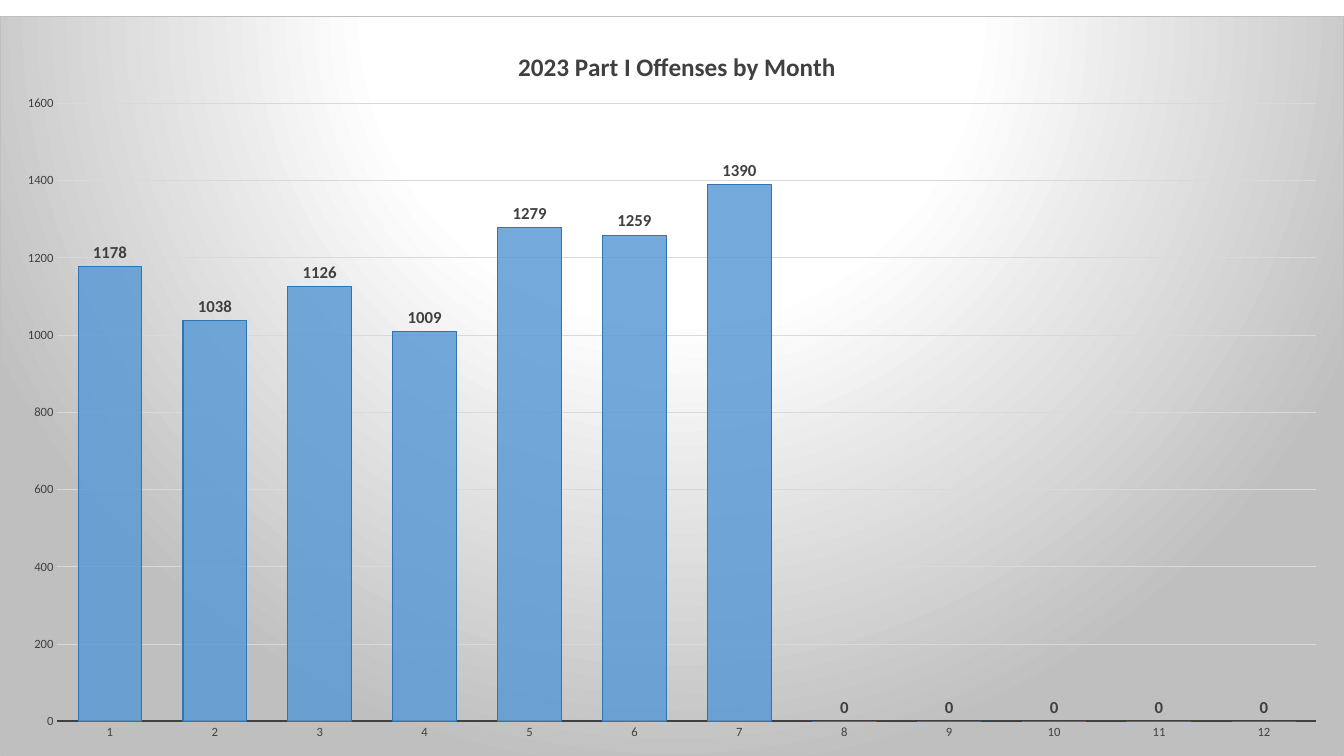
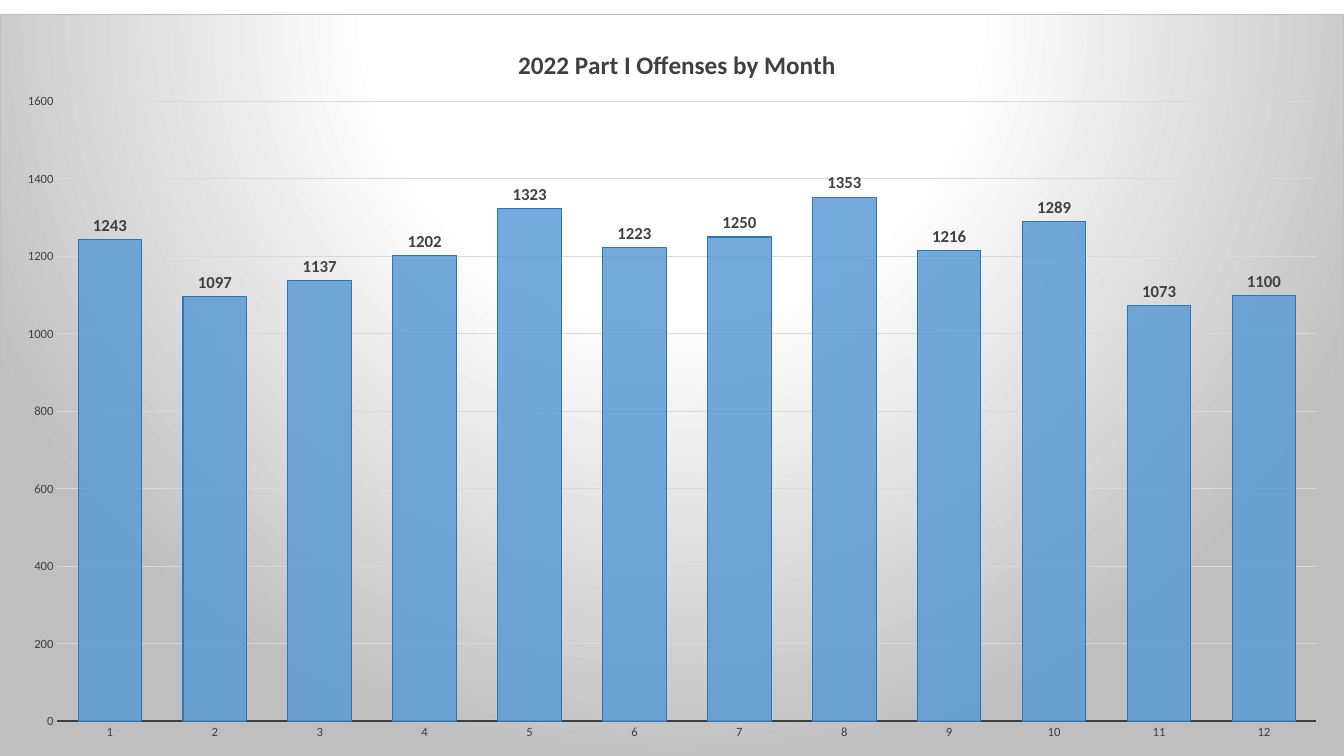
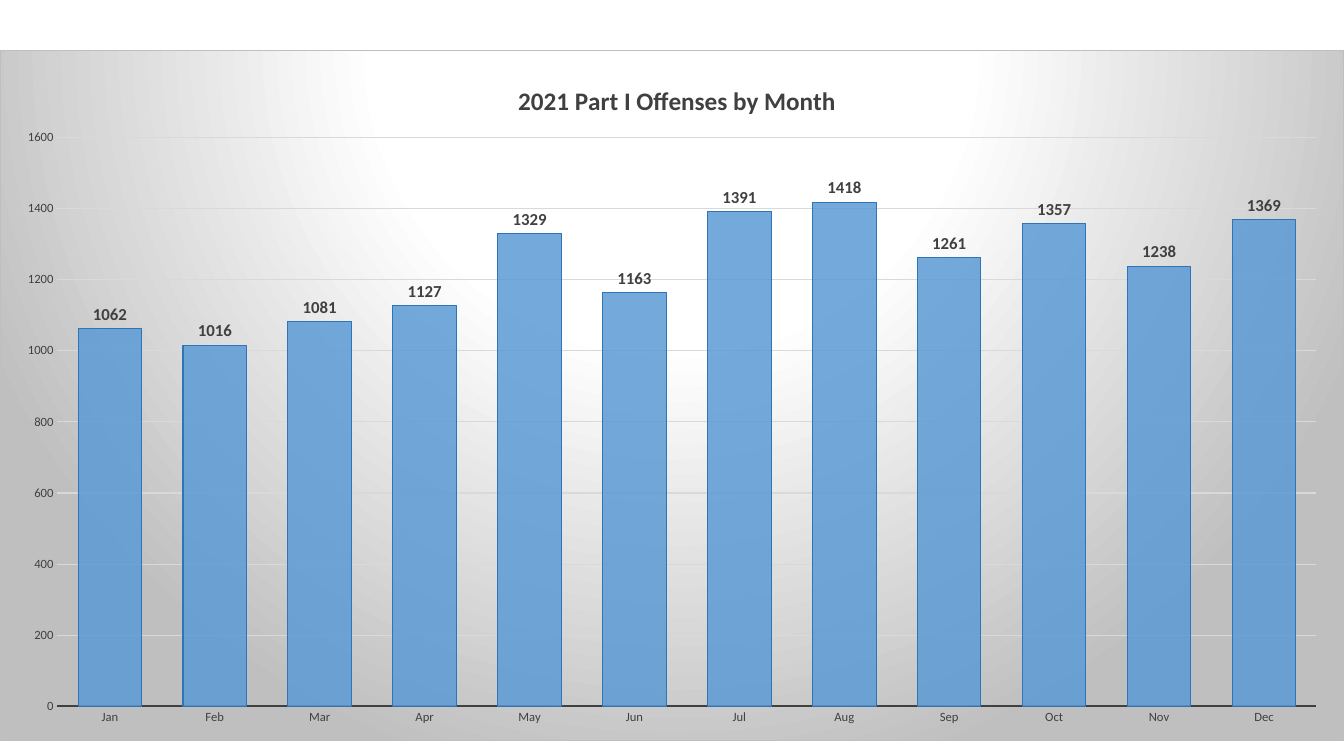
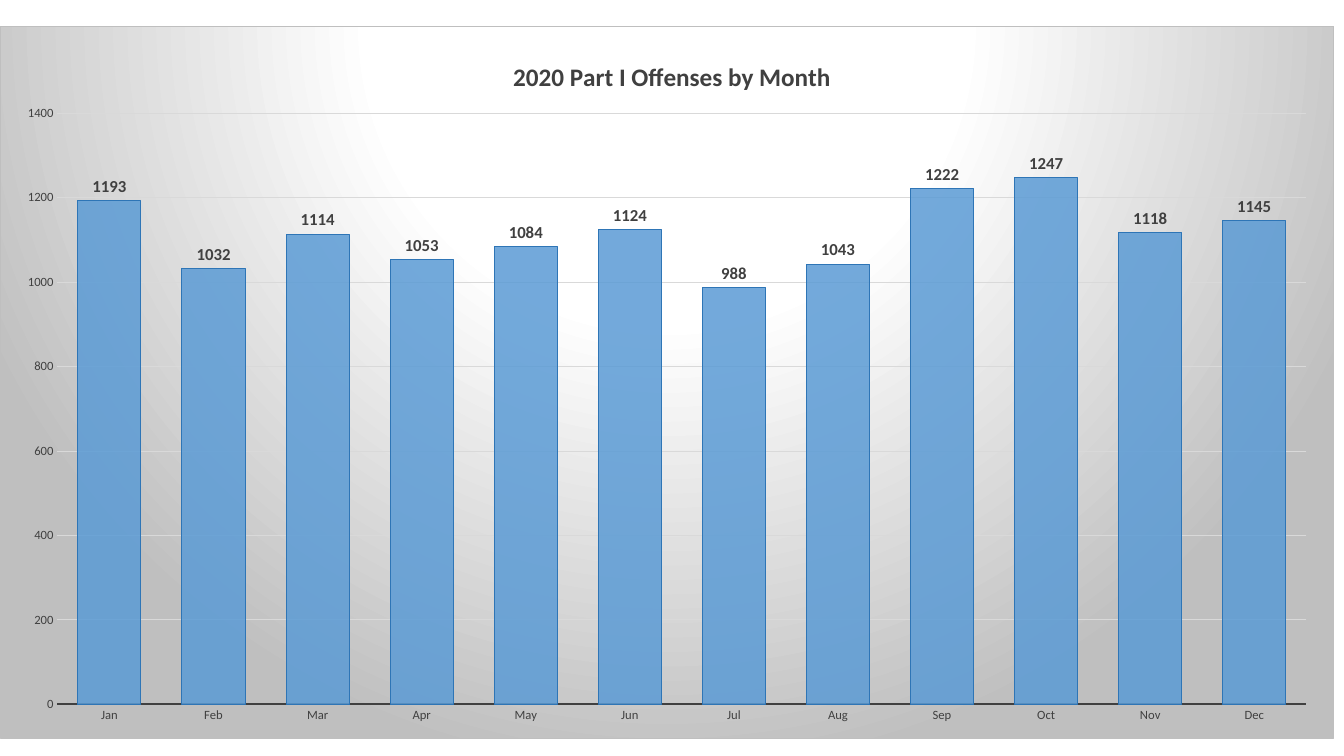
from pptx import Presentation
from pptx.chart.data import CategoryChartData
from pptx.dml.color import RGBColor
from pptx.enum.chart import XL_CHART_TYPE, XL_LABEL_POSITION, XL_TICK_MARK
from pptx.oxml import parse_xml
from pptx.oxml.ns import nsdecls, qn
from pptx.util import Emu, Pt

COLUMNS = XL_CHART_TYPE.COLUMN_CLUSTERED
ABOVE = XL_LABEL_POSITION.OUTSIDE_END
NO_TICK = XL_TICK_MARK.NONE

PX = 914400 / 100.8
PAGE_WIDTH, PAGE_HEIGHT = 1344, 756
PLOT_LEFT, PLOT_TOP, PLOT_RIGHT, PLOT_BOTTOM = 57, 87, 27, 34
TITLE_TOP, TITLE_WIDTH = 28, 317

FONT = "Calibri"
INK, GRID, BAR, BAR_EDGE = "404040", "D9D9D9", "5B9BD5", "2E75B6"
WHITE, SILVER = "FFFFFF", "BFBFBF"
BAR_OPACITY = 85

NUMBERS = [str(month) for month in range(1, 13)]
NAMES = "Jan Feb Mar Apr May Jun Jul Aug Sep Oct Nov Dec".split()

YEARS = [
    (2023, (0, 16, 1344, 740), NUMBERS, 1600,
     (1178, 1038, 1126, 1009, 1279, 1259, 1390, 0, 0, 0, 0, 0)),
    (2022, (0, 14, 1344, 742), NUMBERS, 1600,
     (1243, 1097, 1137, 1202, 1323, 1223, 1250, 1353, 1216, 1289, 1073, 1100)),
    (2021, (0, 50, 1344, 691), NAMES, 1600,
     (1062, 1016, 1081, 1127, 1329, 1163, 1391, 1418, 1261, 1357, 1238, 1369)),
    (2020, (0, 26, 1334, 713), NAMES, 1400,
     (1193, 1032, 1114, 1053, 1084, 1124, 988, 1043, 1222, 1247, 1118, 1145)),
]


def px(length):
    """Turn px into EMU."""
    return Emu(round(length * PX))


def rgb(value):
    """Turn a hex string into a colour."""
    return RGBColor.from_string(value)


def set_font(font, size, bold=False):
    """Apply the shared typeface and ink."""
    font.name = FONT
    font.size = Pt(size)
    font.bold = bold
    font.color.rgb = rgb(INK)


def set_line(line, color, width):
    """Give a line its colour and its width in points."""
    line.color.rgb = rgb(color)
    line.width = Pt(width)


def manual_layout(target="", **fractions):
    """Build a chart layout from fractions of the chart's size."""
    inner = f'<c:layoutTarget val="{target}"/>' if target else ""
    modes = "".join(f'<c:{axis}Mode val="edge"/>' for axis in "xy")
    values = "".join(f'<c:{key} val="{value:.4f}"/>' for key, value in fractions.items())
    return parse_xml(f'<c:layout {nsdecls("c")}><c:manualLayout>'
                     f'{inner}{modes}{values}</c:manualLayout></c:layout>')


def place_layout(holder, position, layout):
    """Put a layout into a chart part in place of any default one."""
    for default in holder.findall(qn("c:layout")):
        holder.remove(default)
    holder.insert(position, layout)


def paint_background(chart):
    """Fill the chart area with the silver glow and outline it."""
    stops = "".join(f'<a:gs pos="{pos}000"><a:srgbClr val="{color}"/></a:gs>'
                    for pos, color in ((0, WHITE), (39, WHITE), (100, SILVER)))
    area = parse_xml(
        f'<c:spPr {nsdecls("c", "a")}><a:gradFill><a:gsLst>{stops}</a:gsLst>'
        '<a:path path="circle"><a:fillToRect l="50000" t="-80000" r="50000" b="180000"/>'
        f'</a:path></a:gradFill><a:ln w="{Pt(0.75)}"><a:solidFill>'
        f'<a:srgbClr val="{SILVER}"/></a:solidFill></a:ln></c:spPr>')
    chart._chartSpace.find(qn("c:chart")).addnext(area)


def style_title(chart, text, width, height):
    """Write the bold title centred at the top of the chart."""
    chart.has_title = True
    title = chart.chart_title
    para = title.text_frame.paragraphs[0]
    para.text = text
    set_font(para.font, 18, True)
    title.include_in_layout = False
    place_layout(title._element, 1, manual_layout(
        x=(width - TITLE_WIDTH) / 2 / width, y=TITLE_TOP / height))


def style_axes(chart, maximum):
    """Style both axes and the gridlines."""
    months, counts = chart.category_axis, chart.value_axis
    for axis in (months, counts):
        axis.major_tick_mark = axis.minor_tick_mark = NO_TICK
        set_font(axis.tick_labels.font, 9)
    set_line(months.format.line, INK, 1.5)
    counts.format.line.fill.background()
    counts.minimum_scale, counts.maximum_scale = 0, maximum
    counts.major_unit = 200
    counts.has_major_gridlines = True
    set_line(counts.major_gridlines.format.line, GRID, 0.75)


def style_bars(chart):
    """Style the translucent bars and the values above them."""
    plot = chart.plots[0]
    plot.gap_width = 65
    plot.vary_by_categories = False
    series = plot.series[0]
    series.format.fill.solid()
    series.format.fill.fore_color.rgb = rgb(BAR)
    tint = series._element.find(qn("c:spPr")).find(qn("a:solidFill"))[0]
    tint.append(parse_xml(f'<a:alpha {nsdecls("a")} val="{BAR_OPACITY}000"/>'))
    set_line(series.format.line, BAR_EDGE, 0.75)
    labels = series.data_labels
    labels.show_value = True
    labels.position = ABOVE
    set_font(labels.font, 12, True)


def add_year_chart(page, year, box, months, maximum, offenses):
    """Place one year's column chart in the given box."""
    data = CategoryChartData()
    data.categories = months
    data.add_series("Series 1", offenses)
    chart = page.shapes.add_chart(COLUMNS, *map(px, box), data).chart
    width, height = box[2:]
    chart.has_legend = False
    set_font(chart.font, 10)
    style_title(chart, f"{year} Part I Offenses by Month", width, height)
    style_axes(chart, maximum)
    style_bars(chart)
    paint_background(chart)
    place_layout(chart._chartSpace.chart.plotArea, 0, manual_layout(
        "inner", x=PLOT_LEFT / width, y=PLOT_TOP / height,
        w=(width - PLOT_LEFT - PLOT_RIGHT) / width,
        h=(height - PLOT_TOP - PLOT_BOTTOM) / height))


def main():
    """Build one page per year and save the deck."""
    deck = Presentation()
    deck.slide_width, deck.slide_height = px(PAGE_WIDTH), px(PAGE_HEIGHT)
    for year in YEARS:
        page = deck.slides.add_slide(deck.slide_layouts[6])
        add_year_chart(page, *year)
    deck.save("out.pptx")


if __name__ == "__main__":
    main()
